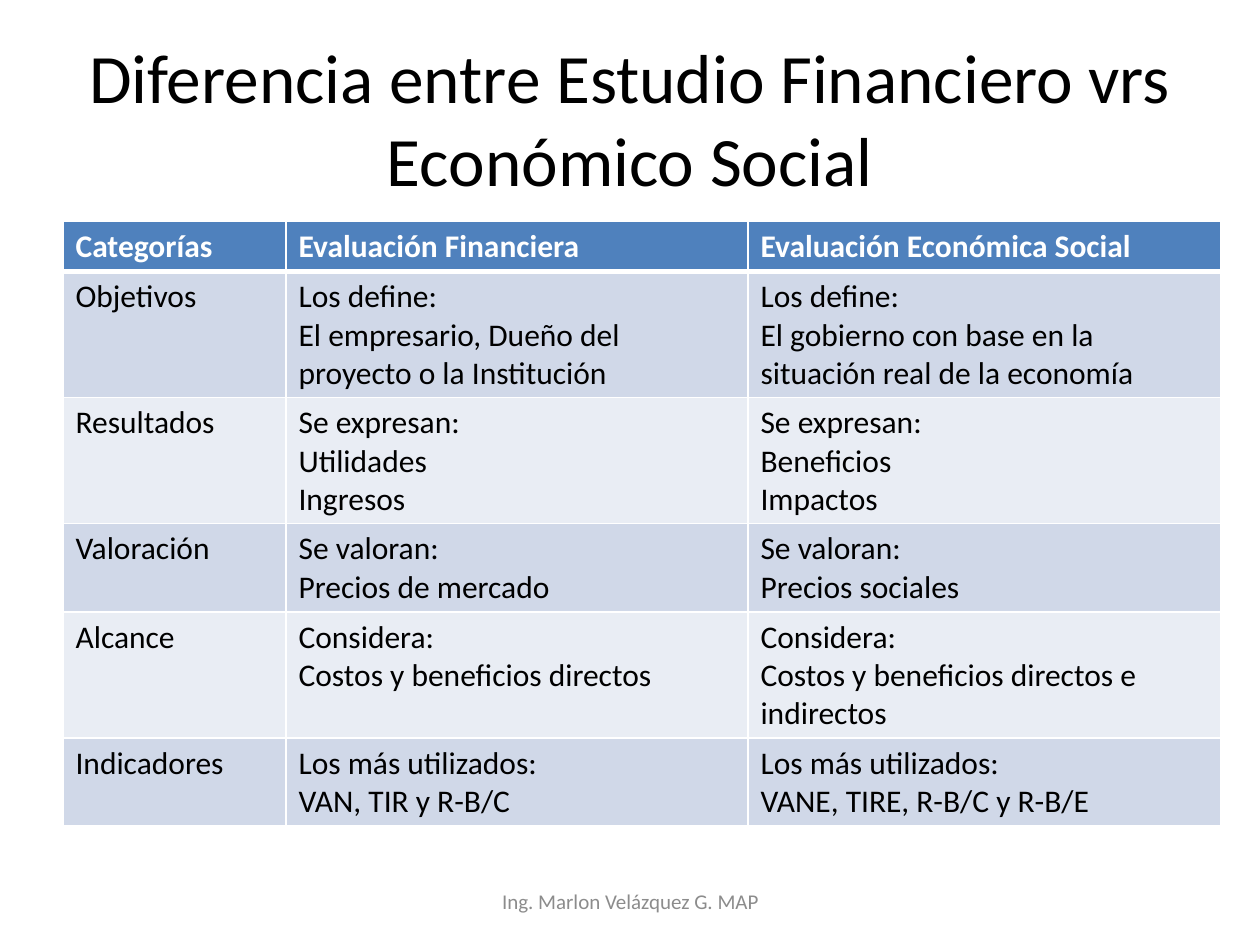
from lxml import etree
from pptx import Presentation
from pptx import util as u
from pptx.dml.color import RGBColor
from pptx.enum import text
from pptx.oxml.ns import qn

PX = 914400 / 126  # EMU in one px
COLORS = {
    "black": "000000", "white": "FFFFFF", "gray": "8C8C8C",
    "header": "4F81BD", "band_dark": "D0D8E8", "band_light": "E9EDF4",
}
COLUMNS = [223, 462, 473]
PADDING, LINE = 12, 38  # a row is its padding plus its lines of text

HEADER = ["Categorías", "Evaluación Financiera", "Evaluación Económica Social"]
# Lines of text in the row, then its three cells
ROWS = [
    (3, "Objetivos",
     "Los define:\nEl empresario, Dueño del proyecto o la Institución",
     "Los define:\nEl gobierno con base en la situación real de la economía"),
    (3, "Resultados",
     "Se expresan:\nUtilidades\nIngresos",
     "Se expresan:\nBeneficios\nImpactos"),
    (2, "Valoración",
     "Se valoran:\nPrecios de mercado",
     "Se valoran:\nPrecios sociales"),
    (3, "Alcance",
     "Considera:\nCostos y beneficios directos",
     "Considera:\nCostos y beneficios directos e indirectos"),
    (2, "Indicadores",
     "Los más utilizados:\nVAN, TIR y R-B/C",
     "Los más utilizados:\nVANE, TIRE, R-B/C y R-B/E"),
]


def emu(px):
    return u.Emu(round(px * PX))


def rgb(name):
    return RGBColor.from_string(COLORS[name])


class Deck:
    font = "Calibri"

    def __init__(self, slide):
        self.s = slide

    def add_text(self, tf, content, size, color, bold=False, align=None):
        for i, line in enumerate(content.split("\n")):
            p = tf.paragraphs[0] if i == 0 else tf.add_paragraph()
            p.alignment = align
            r = p.add_run()
            r.text = line
            r.font.name, r.font.size, r.font.bold = self.font, u.Pt(size), bold
            r.font.color.rgb = rgb(color)

    def label(self, x, y, w, h, content, size, color):
        tf = self.s.shapes.add_textbox(*map(emu, (x, y, w, h))).text_frame
        tf.word_wrap = True
        tf.vertical_anchor = text.MSO_ANCHOR.MIDDLE
        self.add_text(tf, content, size, color, align=text.PP_ALIGN.CENTER)

    def borders(self, cell, bottom):
        tc_pr = cell._tc.get_or_add_tcPr()
        widths = {"a:lnL": 1, "a:lnR": 1, "a:lnT": 1, "a:lnB": bottom}
        for i, (tag, width) in enumerate(widths.items()):
            ln = etree.Element(qn(tag), w=str(int(u.Pt(width))))
            fill = etree.SubElement(ln, qn("a:solidFill"))
            etree.SubElement(fill, qn("a:srgbClr"), val=COLORS["white"])
            tc_pr.insert(i, ln)  # borders come before the fill

    def table(self, x, y, columns, header, rows):
        grid = [(1, *header), *rows]
        heights = [PADDING + LINE * lines for lines, *_ in grid]
        size = (sum(columns), sum(heights))
        table = self.s.shapes.add_table(
            len(grid), len(columns), *map(emu, (x, y, *size))).table
        for column, width in zip(table.columns, columns):
            column.width = emu(width)
        for i, (_, *cells) in enumerate(grid):
            table.rows[i].height = emu(heights[i])
            head = i == 0
            band = "header" if head else "band_dark" if i % 2 else "band_light"
            for j, content in enumerate(cells):
                cell = table.cell(i, j)
                cell.fill.solid()
                cell.fill.fore_color.rgb = rgb(band)
                self.borders(cell, bottom=3 if head else 1)
                self.add_text(cell.text_frame, content, 18,
                              "white" if head else "black", bold=head)


def main():
    prs = Presentation()
    prs.slide_width, prs.slide_height = emu(1260), emu(945)
    deck = Deck(prs.slides.add_slide(prs.slide_layouts[6]))

    # Title
    deck.label(63, 38, 1134, 158,
               "Diferencia entre Estudio Financiero vrs Económico Social",
               39.6, "black")
    # Comparison table
    deck.table(63, 221, COLUMNS, HEADER, ROWS)
    # Footer
    deck.label(431, 876, 399, 50, "Ing. Marlon Velázquez G. MAP", 12, "gray")

    prs.save("out.pptx")


if __name__ == "__main__":
    main()
